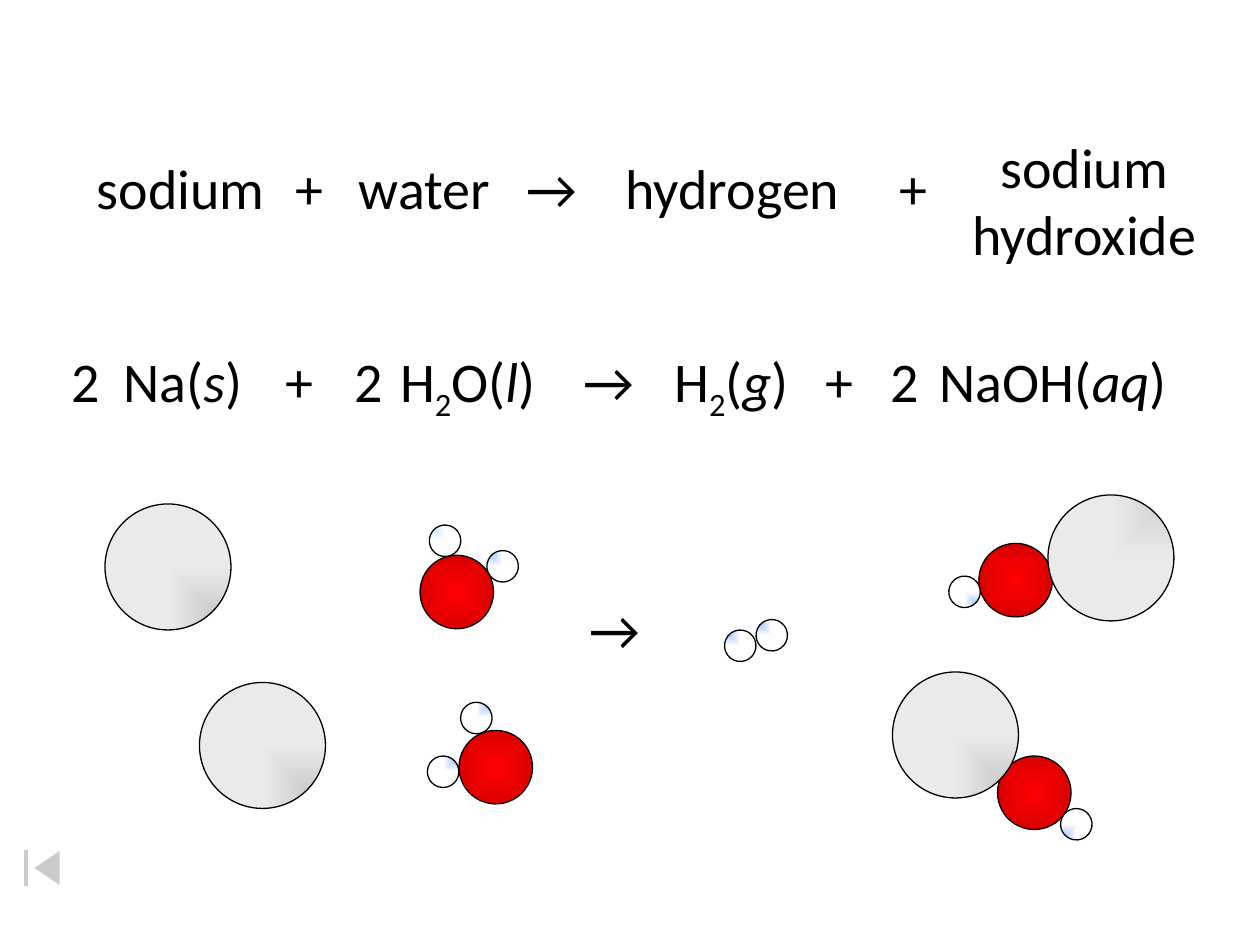
from lxml.etree import SubElement
from pptx import Presentation
from pptx.dml.color import RGBColor
from pptx.enum.shapes import MSO_SHAPE
from pptx.enum.text import MSO_AUTO_SIZE, PP_ALIGN
from pptx.oxml.ns import qn
from pptx.util import Pt

FONT, SIZE, ROW = "Calibri", 32, 45.4

# text row: top, then (left, width, lines); a line is a list of runs,
# where "_" marks a subscript and "/" an italic run
ROWS = [
    (84, [
        (48.2, 117.4, [["sodium"]]),
        (162, 33, [["+"]]),
        (198, 93, [["water"]]),
        (294, 46, [["→"]]),
        (350.3, 147.6, [["hydrogen"]]),
        (507, 33, [["+"]]),
    ]),
    (72, [(543.3, 152.6, [["sodium"], ["hydroxide"]])]),
    (194.4, [
        (33.8, 32.4, [["2"]]),
        (63.4, 93, [["Na(", "/s", ")"]]),
        (156.2, 33, [["+"]]),
        (195.5, 32.4, [["2"]]),
        (221.5, 102.2, [["H", "_2", "O(", "/l", ")"]]),
        (326.2, 46, [["→"]]),
        (378.2, 88.6, [["H", "_2", "(", "/g", ")"]]),
        (464.4, 33, [["+"]]),
        (501.8, 32.4, [["2"]]),
        (530, 160, [["NaOH(", "/aq", ")"]]),
    ]),
    (336, [(330, 46, [["→"]])]),
]

# element: diameter, inner colour, outer colour
ATOMS = {
    "H": (18, "6699FF", "FFFFFF"),
    "O": (42, "FF0000", "CC0000"),
    "Na": (72, "C0C0C0", "EAEAEA"),
}
# gradient focus: left, top, right, bottom in percent
FOCUS = {
    "mid": (50, 50, 50, 50),
    "top left": (0, 0, 100, 100),
    "top right": (100, 0, 0, 100),
    "low left": (0, 100, 100, 0),
    "low right": (100, 100, 0, 0),
}
# particle: atoms from back to front as (element, left, top, turn, focus)
PARTS = [
    [("H", 414, 360, 113.9, "top left"), ("H", 432, 354, 113.9, "top left")],
    [("Na", 60, 288, 0, "low right")],
    [("Na", 114, 390, 0, "low right")],
    [("O", 570, 432, 113.9, "mid"), ("H", 606, 462, 113.9, "low left"),
     ("Na", 510, 384, 0, "low right")],
    [("H", 263.2, 401.3, 31.7, "top right"), ("O", 262.3, 417.4, 31.7, "mid"),
     ("H", 244.2, 432, 31.7, "top right")],
    [("H", 278.2, 314.6, 113.9, "top left"), ("O", 240, 317.3, 113.9, "mid"),
     ("H", 245.3, 300, 113.9, "top left", "99CCFF")],
    [("O", 559.4, 310.5, 244.5, "mid"), ("H", 542.2, 329.2, 244.5, "low right"),
     ("Na", 598.8, 282.8, 130.6, "top right")],
]


def tint(code):
    return RGBColor.from_string(code)


def blend(shape, inner, outer, focus):
    """Fill a shape with a gradient that spreads from its focus."""
    shape.fill.gradient()
    grad = shape.fill._xPr.find(qn("a:gradFill"))
    for node in list(grad):
        grad.remove(node)
    grad.set("rotWithShape", "0")
    stops = SubElement(grad, qn("a:gsLst"))
    for pos, code in ((0, inner), (100000, outer)):
        stop = SubElement(stops, qn("a:gs"), pos=str(pos))
        SubElement(stop, qn("a:srgbClr"), val=code)
    kind = "shape" if focus == "mid" else "rect"
    way = SubElement(grad, qn("a:path"), {"path": kind})
    sides = {side: str(n * 1000) for side, n in zip("ltrb", FOCUS[focus])}
    SubElement(way, qn("a:fillToRect"), sides)


def edge(shape, code):
    shape.shadow.inherit = False
    shape.line.color.rgb = tint(code)
    shape.line.width = Pt(0.75)


def add_atom(home, kind, left, top, turn, focus, inner=None):
    size, core, outer = ATOMS[kind]
    ball = home.add_shape(MSO_SHAPE.OVAL, Pt(left), Pt(top), Pt(size), Pt(size))
    ball.rotation = turn
    blend(ball, inner or core, outer, focus)
    edge(ball, "000000")


def add_text(slide, left, top, width, lines):
    high = ROW + 38.6 * (len(lines) - 1)
    box = slide.shapes.add_textbox(Pt(left), Pt(top), Pt(width), Pt(high))
    frame = box.text_frame
    frame.word_wrap = False
    frame.auto_size = MSO_AUTO_SIZE.SHAPE_TO_FIT_TEXT
    for i, line in enumerate(lines):
        para = frame.add_paragraph() if i else frame.paragraphs[0]
        if len(lines) > 1:
            para.alignment = PP_ALIGN.CENTER
        for part in line:
            run = para.add_run()
            run.text = part.lstrip("_/")
            font = run.font
            font.name, font.size = FONT, Pt(SIZE)
            font.color.rgb = tint("000000")
            if part[0] == "/":
                font.italic = True
            if part[0] == "_":
                font._element.set("baseline", "-25000")


def add_button(slide):
    key = slide.shapes.add_shape(MSO_SHAPE.ACTION_BUTTON_BEGINNING,
                                 Pt(0), Pt(482), Pt(48), Pt(28))
    key.fill.solid()
    key.fill.fore_color.rgb = tint("FFFFFF")
    code = key.fill._xPr.find(qn("a:solidFill"))[0]
    SubElement(code, qn("a:alpha"), val="50000")
    edge(key, "FFFFFF")


def main():
    deck = Presentation()
    deck.slide_width, deck.slide_height = Pt(720), Pt(540)
    slide = deck.slides.add_slide(deck.slide_layouts[6])
    for atoms in PARTS:
        home = slide.shapes
        if len(atoms) > 1:
            home = home.add_group_shape().shapes
        for atom in atoms:
            add_atom(home, *atom)
    for top, words in ROWS:
        for left, width, lines in words:
            add_text(slide, left, top, width, lines)
    add_button(slide)
    deck.save("out.pptx")


if __name__ == "__main__":
    main()
